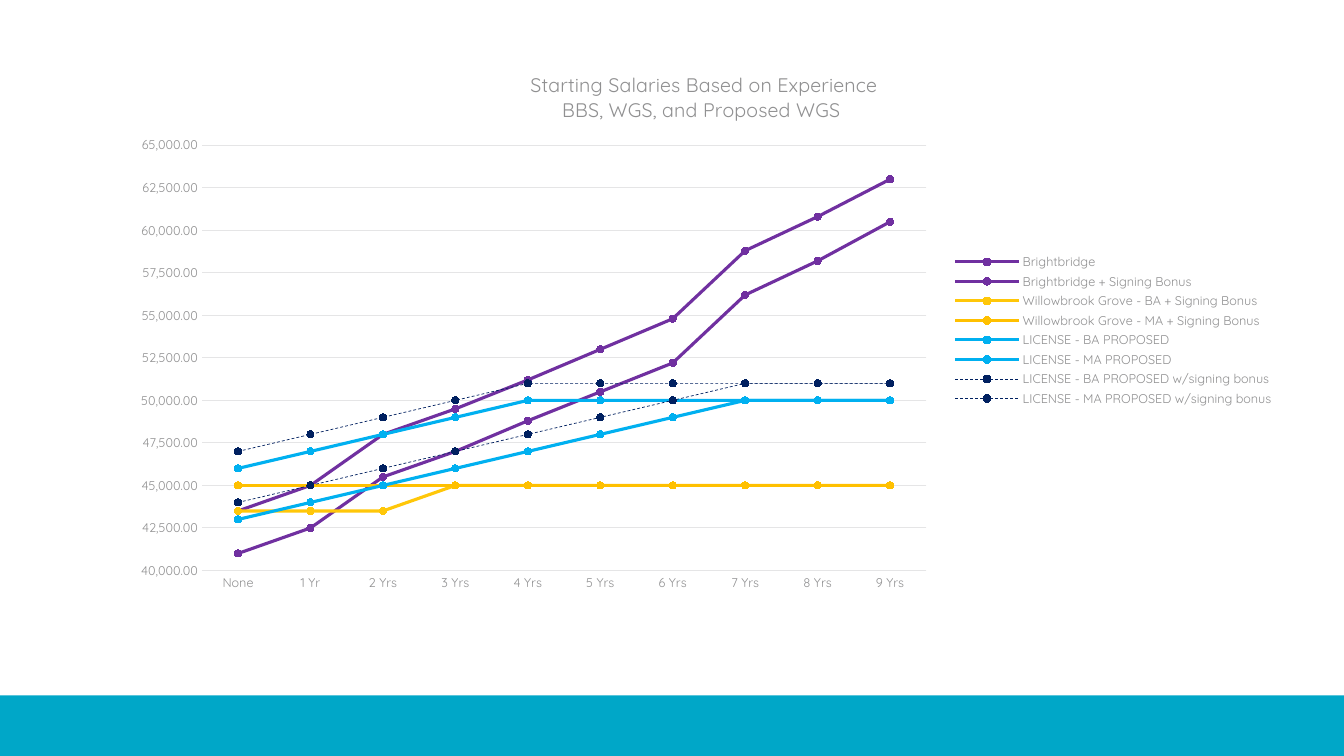
from lxml.etree import SubElement
from pptx import Presentation
from pptx.chart.data import CategoryChartData
from pptx.dml.color import RGBColor
from pptx.enum.chart import (XL_CHART_TYPE, XL_LEGEND_POSITION,
                             XL_MARKER_STYLE, XL_TICK_MARK)
from pptx.enum.dml import MSO_LINE
from pptx.enum.shapes import MSO_SHAPE
from pptx.oxml.ns import qn
from pptx.util import Inches, Pt

FONT = "Quicksand"
COLORS = {"band": "00A7C8", "text": "909091", "grid": "E5E5E6",
          "purple": "7030A0", "gold": "FFC709", "amber": "FFC000",
          "blue": "00B0F0", "navy": "002060"}
TITLE = ["Starting Salaries Based on Experience", "BBS, WGS, and Proposed WGS "]
YEARS = ["None", "1 Yr"] + [f"{n} Yrs" for n in range(2, 10)]


def climb(start, top):
    """Salaries that rise by 1,000 a year up to a cap."""
    return [min(start + 1000 * n, top) for n in range(10)]


# name, colour, salaries, is dashed
SERIES = [
    ("Brightbridge ", "purple",
     [41000, 42500, 45500, 47000, 48800, 50500, 52200, 56200, 58200, 60500], False),
    ("Brightbridge + Signing Bonus", "purple",
     [43500, 45000, 48000, 49500, 51200, 53000, 54800, 58800, 60800, 63000], False),
    ("Willowbrook Grove - BA + Signing Bonus", "gold",
     [43500] * 3 + [45000] * 7, False),
    ("Willowbrook Grove - MA + Signing Bonus", "amber", [45000] * 10, False),
    ("LICENSE - BA PROPOSED", "blue", climb(43000, 50000), False),
    ("LICENSE - MA PROPOSED", "blue", climb(46000, 50000), False),
    ("LICENSE - BA PROPOSED w/signing bonus", "navy", climb(44000, 51000), True),
    ("LICENSE - MA PROPOSED w/signing bonus", "navy", climb(47000, 51000), True),
]


def color(name):
    return RGBColor.from_string(COLORS[name])


def style(font, size):
    font.name, font.size, font.bold = FONT, Pt(size), False
    font.color.rgb = color("text")


def stroke(line, name, width):
    line.color.rgb = color(name)
    line.width = Pt(width)


def place(part, box, inner=False):
    """Fix a chart part at a box given as fractions of the chart."""
    layout = part.find(qn("c:layout"))
    if layout is None:
        layout = SubElement(part, qn("c:layout"))
        if inner:
            part.insert(0, layout)
        else:
            part.find(qn("c:legendPos")).addnext(layout)
    manual = SubElement(layout, qn("c:manualLayout"))
    rules = [("layoutTarget", "inner")] if inner else []
    rules += [("xMode", "edge"), ("yMode", "edge"), *zip("xywh", box)]
    for tag, value in rules:
        SubElement(manual, qn(f"c:{tag}")).set("val", str(value))


def add_title(chart):
    frame = chart.chart_title.text_frame
    for num, text in enumerate(TITLE):
        para = frame.add_paragraph() if num else frame.paragraphs[0]
        run = para.add_run()
        run.text = text
        style(run.font, 14)
    chart.chart_title.include_in_layout = False


def style_axes(chart):
    years, pay = chart.category_axis, chart.value_axis
    for axis in (years, pay):
        axis.major_tick_mark = axis.minor_tick_mark = XL_TICK_MARK.NONE
        style(axis.tick_labels.font, 9)
    stroke(years.format.line, "grid", 0.75)
    pay.format.line.fill.background()
    pay.minimum_scale, pay.maximum_scale, pay.major_unit = 40000, 65000, 2500
    stroke(pay.major_gridlines.format.line, "grid", 0.75)
    pay.tick_labels.number_format = "#,##0.00"
    pay.tick_labels.number_format_is_linked = False


def style_lines(plot):
    plot.vary_by_categories = False
    for line, (_, name, _, dashed) in zip(plot.series, SERIES):
        line.smooth = False
        stroke(line.format.line, name, 0.5 if dashed else 2.25)
        if dashed:
            line.format.line.dash_style = MSO_LINE.DASH
        mark = line.marker
        mark.style, mark.size = XL_MARKER_STYLE.CIRCLE, 5
        mark.format.fill.solid()
        mark.format.fill.fore_color.rgb = color(name)
        stroke(mark.format.line, name, 0.75)


def add_salaries(slide, left, top, width, height):
    data = CategoryChartData(number_format="#,##0.00")
    data.categories = YEARS
    for name, _, values, _ in SERIES:
        data.add_series(name, values)
    chart = slide.shapes.add_chart(
        XL_CHART_TYPE.LINE_MARKERS, left, top, width, height, data).chart
    style(chart.font, 10)
    add_title(chart)
    style_axes(chart)
    style_lines(chart.plots[0])
    chart.has_legend = True
    legend = chart.legend
    legend.position = XL_LEGEND_POSITION.RIGHT
    legend.include_in_layout = False
    style(legend.font, 9)
    area = chart.category_axis._element.getparent()
    place(area, (0.07, 0.17, 0.62, 0.77), inner=True)
    place(legend._element, (0.71, 0.36, 0.28, 0.29))


def add_band(slide, left, top, width, height):
    band = slide.shapes.add_shape(MSO_SHAPE.RECTANGLE, left, top, width, height)
    band.shadow.inherit = False
    band.fill.solid()
    band.fill.fore_color.rgb = color("band")
    band.line.fill.background()


def main():
    deck = Presentation()
    deck.slide_width, deck.slide_height = Inches(13.33), Inches(7.5)
    slide = deck.slides.add_slide(deck.slide_layouts[6])
    add_band(slide, 0, Inches(6.9), deck.slide_width, Inches(0.6))
    add_salaries(slide, Inches(1.19), Inches(0.51), Inches(11.59), Inches(5.48))
    deck.save("out.pptx")


if __name__ == "__main__":
    main()
